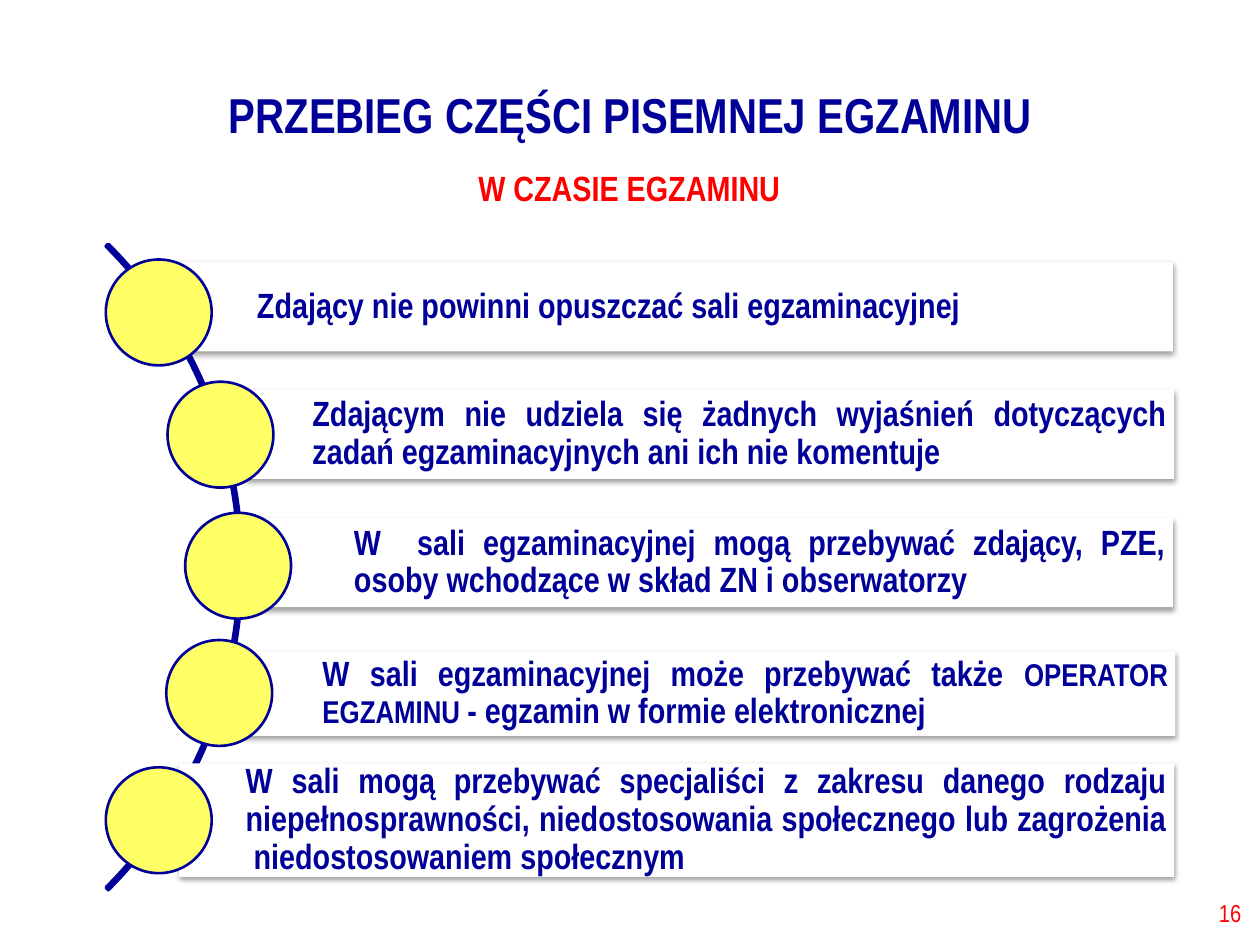
from lxml import etree
from pptx import Presentation
from pptx.dml.color import RGBColor
from pptx.enum.shapes import MSO_SHAPE as SHAPE
from pptx.enum.text import MSO_ANCHOR as ANCHOR, PP_ALIGN as ALIGN
from pptx.oxml.ns import qn
from pptx.util import Inches, Pt

FONT = "Arial Narrow"
NAVY, RED, YELLOW, WHITE, BROWN = "000099", "FF0000", "FFFF66", "FFFFFF", "7B3D17"

TITLE = "PRZEBIEG CZĘŚCI PISEMNEJ EGZAMINU"
SUBTITLE = "W CZASIE EGZAMINU"
PAGE = "16"
RULES = [
    {"bar": (1.21, 2.08, 8.1, 0.71), "dot": (0.84, 2.06), "indent": 0.3,
     "runs": [("Zdający nie powinni opuszczać sali egzaminacyjnej", 20)]},
    {"bar": (1.95, 3.09, 7.37, 0.71), "dot": (1.33, 3.03), "indent": 0,
     "runs": [("Zdającym nie udziela się żadnych wyjaśnień dotyczących zadań "
               "egzaminacyjnych ani ich nie komentuje", 20)]},
    {"bar": (2.08, 4.11, 7.23, 0.71), "dot": (1.47, 4.07), "indent": 0.2,
     "runs": [("W  sali egzaminacyjnej mogą przebywać zdający, PZE, osoby "
               "wchodzące w skład ZN i obserwatorzy", 20)]},
    {"bar": (1.93, 5.17, 7.4, 0.67), "dot": (1.32, 5.08), "indent": 0.1,
     "runs": [("W sali egzaminacyjnej może przebywać także ", 20),
              ("OPERATOR EGZAMINU ", 18),
              ("- egzamin w formie elektronicznej", 20)]},
    {"bar": (1.42, 6.06, 7.9, 0.9), "dot": (0.84, 6.09), "indent": 0,
     "runs": [("W sali mogą przebywać specjaliści z zakresu danego rodzaju "
               "niepełnosprawności, niedostosowania społecznego lub zagrożenia "
               " niedostosowaniem społecznym", 20)]},
]
DOT_SIZE = 0.84


def color(hex_value):
    return RGBColor.from_string(hex_value)


def style(paragraph, size, ink, align, bold=True, spacing=0.9):
    paragraph.alignment = align
    paragraph.line_spacing = spacing
    font = paragraph.font
    font.name, font.size, font.bold = FONT, Pt(size), bold
    font.color.rgb = color(ink)


def add_figure(slide, kind, box, fill, line_width=0):
    figure = slide.shapes.add_shape(kind, *map(Inches, box))
    figure.shadow.inherit = False
    figure.fill.solid()
    figure.fill.fore_color.rgb = color(fill)
    if line_width:
        figure.line.color.rgb = color(NAVY)
        figure.line.width = Pt(line_width)
    else:
        figure.line.fill.background()
    return figure


def add_drop_shadow(figure):
    effects = figure._element.spPr.find(qn("a:effectLst"))
    shadow = etree.SubElement(effects, qn("a:outerShdw"), blurRad=str(Pt(3.1)),
                              dist=str(Pt(1.6)), dir="5400000", rotWithShape="0")
    black = etree.SubElement(shadow, qn("a:srgbClr"), val="000000")
    etree.SubElement(black, qn("a:alpha"), val="38000")


def add_rule(slide, rule):
    bar = add_figure(slide, SHAPE.RECTANGLE, rule["bar"], WHITE)
    add_drop_shadow(bar)
    frame = bar.text_frame
    frame.word_wrap = True
    frame.vertical_anchor = ANCHOR.MIDDLE
    frame.margin_left = Inches(0.53)
    frame.margin_top = frame.margin_right = frame.margin_bottom = Inches(0.06)
    paragraph = frame.paragraphs[0]
    paragraph._p.get_or_add_pPr().set("marL", str(Inches(rule["indent"])))
    style(paragraph, 20, NAVY, ALIGN.JUSTIFY)
    for words, size in rule["runs"]:
        run = paragraph.add_run()
        run.text = words
        run.font.size = Pt(size)
    add_figure(slide, SHAPE.OVAL, (*rule["dot"], DOT_SIZE, DOT_SIZE), YELLOW, 1.5)


def write(holder, words, *look, **options):
    frame = holder.text_frame
    frame.word_wrap = True
    frame.vertical_anchor = ANCHOR.MIDDLE
    frame.text = words
    style(frame.paragraphs[0], *look, **options)


def add_label(slide, box, *content, **options):
    write(slide.shapes.add_textbox(*map(Inches, box)), *content, **options)


def main():
    deck = Presentation()
    deck.slide_width, deck.slide_height = Inches(10), Inches(7.5)
    slide = deck.slides.add_slide(deck.slide_layouts[5])

    title = slide.shapes.title
    title.left, title.top, title.width, title.height = map(Inches, (0.69, 0.63, 8.62, 0.6))
    write(title, TITLE, 28, NAVY, ALIGN.CENTER)
    add_label(slide, (2.38, 1.21, 5.23, 0.6), SUBTITLE, 20, RED, ALIGN.CENTER)

    arc = add_figure(slide, SHAPE.BLOCK_ARC, (-5.32, 0.88, 7.24, 7.24), BROWN, 2.25)
    for index, value in enumerate((189, 27, 0.003)):
        arc.adjustments[index] = value
    for rule in RULES:
        add_rule(slide, rule)

    add_label(slide, (7.7, 7.04, 2.25, 0.4), PAGE, 14, RED, ALIGN.RIGHT,
              bold=False, spacing=1.0)
    deck.save("out.pptx")


if __name__ == "__main__":
    main()
